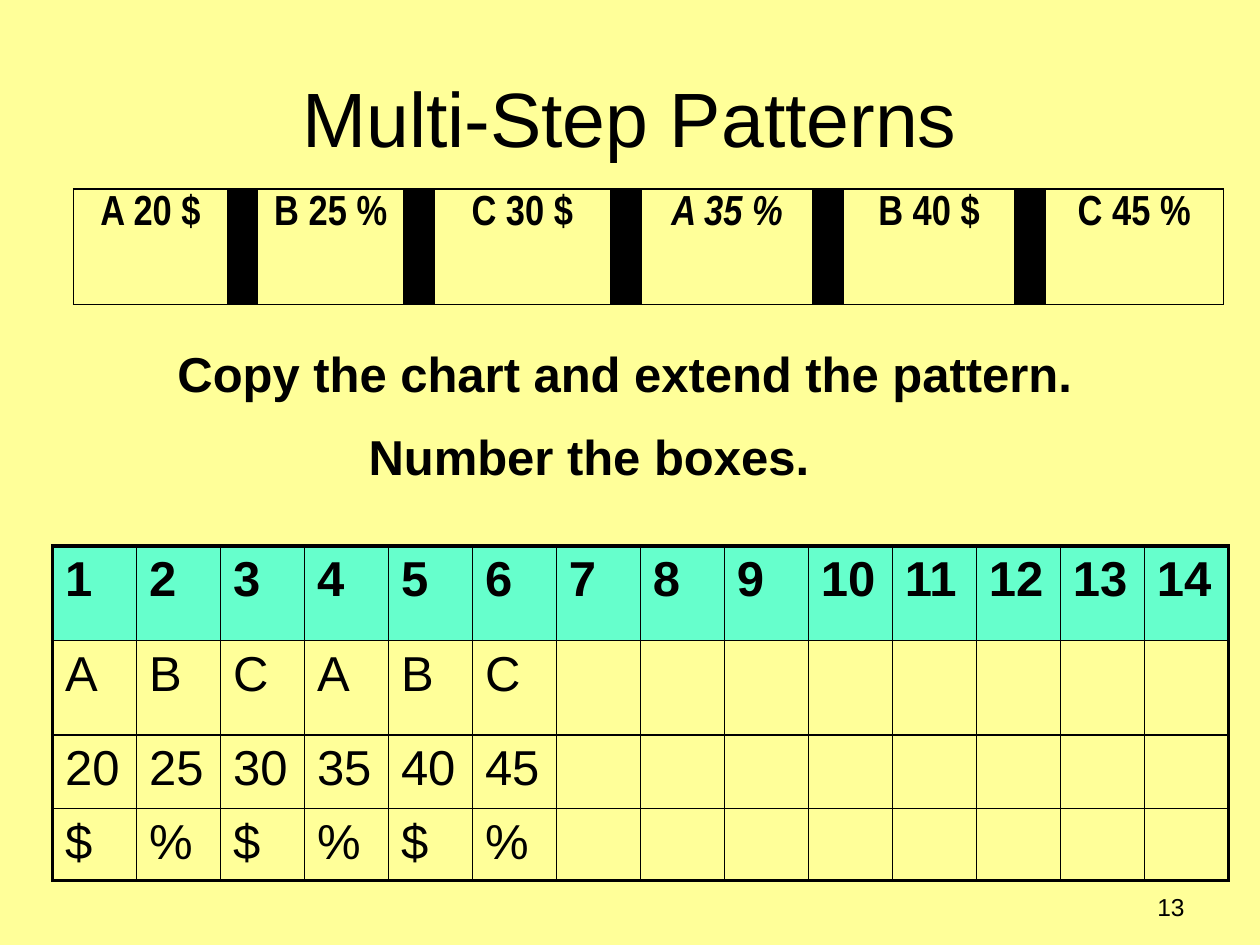
from dataclasses import dataclass

from lxml import etree
from pptx import Presentation
from pptx import util as u
from pptx.dml import color
from pptx.enum import text
from pptx.oxml import ns


@dataclass(frozen=True)
class Theme:
    background: str = "FFFF99"
    ink: str = "000000"
    header: str = "66FFCC"
    font: str = "Arial"
    narrow_font: str = "Arial Narrow"
    title_size: float = 44
    body_size: float = 28
    pattern_size: float = 24
    number_size: float = 14
    thin: float = 1
    thick: float = 2.25


THEME = Theme()
ALIGN = text.PP_ALIGN
COLUMN_COUNT = 14
LETTERS = ["A", "B", "C", "A", "B", "C"]
AMOUNTS = ["20", "25", "30", "35", "40", "45"]
SYMBOLS = ["$", "%"] * 3
ITALIC_BOX = "A 35 %"


def write_text(frame, content, size=THEME.body_size, font=THEME.font,
               bold=False, italic=False, align=ALIGN.LEFT):
    paragraph = frame.paragraphs[0]
    paragraph.alignment = align
    run = paragraph.add_run()
    run.text = content
    run.font.size = u.Pt(size)
    run.font.name = font
    run.font.bold = bold
    run.font.italic = italic
    run.font.color.rgb = color.RGBColor.from_string(THEME.ink)


class SlideBuilder:
    def __init__(self, presentation, theme):
        self.theme = theme
        self.slide = presentation.slides.add_slide(presentation.slide_layouts[6])
        self.fill(self.slide.background.fill, theme.background)

    def fill(self, target, value):
        if value is None:
            target.background()
        else:
            target.solid()
            target.fore_color.rgb = color.RGBColor.from_string(value)

    def text_box(self, box, content, anchor=text.MSO_ANCHOR.TOP, **style):
        shape = self.slide.shapes.add_textbox(*map(u.Pt, box))
        shape.text_frame.word_wrap = True
        shape.text_frame.vertical_anchor = anchor
        write_text(shape.text_frame, content, **style)

    def table(self, left, top, widths, heights):
        table = self.slide.shapes.add_table(
            len(heights), len(widths), u.Pt(left), u.Pt(top),
            u.Pt(sum(widths)), u.Pt(sum(heights))).table
        table.first_row = False
        table.horz_banding = False
        for column, width in zip(table.columns, widths):
            column.width = u.Pt(width)
        for row, height in zip(table.rows, heights):
            row.height = u.Pt(height)
        return table

    def cell(self, cell, content="", fill=None, thick_sides="", **style):
        properties = cell._tc.get_or_add_tcPr()
        for side in "LRTB":
            weight = self.theme.thick if side in thick_sides else self.theme.thin
            line = etree.SubElement(properties, ns.qn(f"a:ln{side}"), w=str(u.Pt(weight)))
            solid = etree.SubElement(line, ns.qn("a:solidFill"))
            etree.SubElement(solid, ns.qn("a:srgbClr"), val=self.theme.ink)
        self.fill(cell.fill, fill)
        if content:
            write_text(cell.text_frame, content, **style)


def add_number_chart(builder):
    heights = [54, 54, 42, 41]
    table = builder.table(30, 312, [48] * COLUMN_COUNT, heights)
    numbers = [str(number + 1) for number in range(COLUMN_COUNT)]
    rows = [numbers, LETTERS, AMOUNTS, SYMBOLS]
    for row, values in enumerate(rows):
        for column in range(COLUMN_COUNT):
            edges = {"L": column == 0, "R": column == COLUMN_COUNT - 1,
                     "T": row == 0, "B": row == len(rows) - 1}
            builder.cell(
                table.cell(row, column),
                values[column] if column < len(values) else "",
                fill=THEME.header if row == 0 else None,
                thick_sides="".join(side for side in edges if edges[side]),
                bold=row == 0)


def add_pattern_strip(builder):
    widths = [88, 16.5, 83.5, 16.5, 101, 16.5, 98.5, 16.5, 98, 17, 102]
    table = builder.table(42, 108, widths, [66])
    boxes = [" ".join(parts) for parts in zip(LETTERS, AMOUNTS, SYMBOLS)]
    for column in range(len(widths)):
        cell = table.cell(0, column)
        if column % 2:
            builder.cell(cell, fill=THEME.ink)
        else:
            content = boxes[column // 2]
            builder.cell(cell, content, size=THEME.pattern_size,
                         font=THEME.narrow_font, bold=True,
                         italic=content == ITALIC_BOX, align=ALIGN.CENTER)


def main():
    presentation = Presentation()
    presentation.slide_width = u.Pt(720)
    presentation.slide_height = u.Pt(540)
    builder = SlideBuilder(presentation, THEME)
    builder.text_box((36, 21.6, 648, 90), "Multi-Step Patterns",
                     anchor=text.MSO_ANCHOR.MIDDLE,
                     size=THEME.title_size, align=ALIGN.CENTER)
    builder.text_box((84, 192.5, 546, 40), "Copy the chart and extend the pattern.",
                     bold=True, align=ALIGN.CENTER)
    builder.text_box((63.5, 240, 546, 40), "Number the boxes.",
                     bold=True, align=ALIGN.CENTER)
    add_number_chart(builder)
    add_pattern_strip(builder)
    builder.text_box((516, 506, 168, 26), "13",
                     size=THEME.number_size, align=ALIGN.RIGHT)
    presentation.save("out.pptx")


if __name__ == "__main__":
    main()
